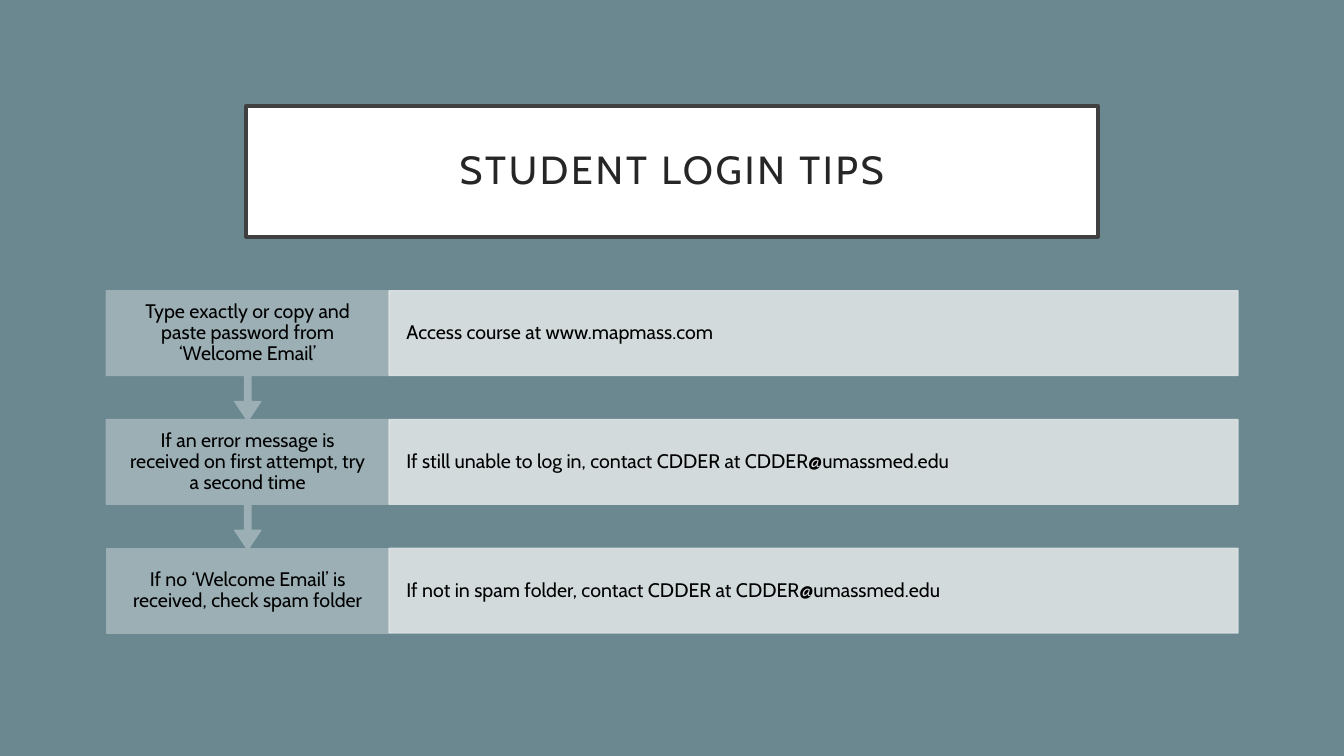
"""Build the student login tips slide with a three-step flow."""
from lxml import etree
from pptx import Presentation
from pptx import util as u
from pptx.dml import color as dml
from pptx.enum import shapes, text
from pptx.oxml import ns

hex_color = dml.RGBColor.from_string


def paint(shape, fill, line, width, opacity=100):
    shape.shadow.inherit = False
    shape.fill.solid()
    shape.fill.fore_color.rgb = hex_color(fill)
    shape.line.color.rgb = hex_color(line)
    shape.line.width = u.Pt(width)
    if opacity < 100:
        for color in shape._element.spPr.iter(ns.qn("a:srgbClr")):
            etree.SubElement(color, ns.qn("a:alpha"), val=str(opacity * 1000))


def write(shape, words, size=14, color="000000", align=text.PP_ALIGN.CENTER,
          side=14.4, edge=7.92, tracking=0):
    frame = shape.text_frame
    frame.word_wrap = True
    frame.auto_size = text.MSO_AUTO_SIZE.NONE
    frame.vertical_anchor = text.MSO_ANCHOR.MIDDLE
    frame.margin_left = frame.margin_right = u.Pt(side)
    frame.margin_top = frame.margin_bottom = u.Pt(edge)
    paragraph = frame.paragraphs[0]
    paragraph.alignment = align
    paragraph.line_spacing = 0.9
    run = paragraph.add_run()
    run.text = words
    run.font.name = "Cabin"
    run.font.size = u.Pt(size)
    run.font.color.rgb = hex_color(color)
    if tracking:
        run._r.get_or_add_rPr().set("spc", str(tracking * 100))


presentation = Presentation()
presentation.slide_width = u.Pt(960)
presentation.slide_height = u.Pt(540)
slide = presentation.slides.add_slide(presentation.slide_layouts[5])
slide.background.fill.solid()
slide.background.fill.fore_color.rgb = hex_color("6B8891")

title = slide.shapes.title
title.left, title.top = u.Pt(175.8), u.Pt(75.6)
title.width, title.height = u.Pt(608.4), u.Pt(93.6)
paint(title, "FFFFFF", "404040", 2.5)
write(title, "STUDENT LOGIN TIPS", size=28, color="262626", edge=14.4, tracking=2)

tips = [
    ("Type exactly or copy and paste password from ‘Welcome Email’",
     "Access course at www.mapmass.com"),
    ("If an error message is received on first attempt, try a second time",
     "If still unable to log in, contact CDDER at CDDER@umassmed.edu"),
    ("If no ‘Welcome Email’ is received, check spam folder",
     "If not in spam folder, contact CDDER at CDDER@umassmed.edu"),
]
first_top, row_pitch, row_height, callout_height = 207.7, 92, 60.5, 93
step_left, step_width = 75.9, 202.1
detail_left, detail_width = step_left + step_width, 606.3
last_row = len(tips) - 1

for row in reversed(range(len(tips))):
    step_words, detail_words = tips[row]
    top = u.Pt(first_top + row * row_pitch)
    step_box = u.Pt(step_left), top, u.Pt(step_width), u.Pt(row_height)

    if row == last_row:
        step = label = slide.shapes.add_shape(shapes.MSO_SHAPE.RECTANGLE, *step_box)
    else:
        step = slide.shapes.add_shape(
            shapes.MSO_SHAPE.UP_ARROW_CALLOUT, *step_box[:3], u.Pt(callout_height))
        step.rotation = 180
        for index, value in enumerate((0.05, 0.1, 0.15, 0.65)):
            step.adjustments[index] = value
        label = slide.shapes.add_textbox(*step_box)
    paint(step, "9BAFB5", "9BAFB5", 1)
    write(label, step_words)

    detail = slide.shapes.add_shape(
        shapes.MSO_SHAPE.RECTANGLE,
        u.Pt(detail_left), top, u.Pt(detail_width), u.Pt(row_height))
    paint(detail, "DEE3E5", "DEE3E5", 1, opacity=90)
    write(detail, detail_words, align=text.PP_ALIGN.LEFT, side=12.3, edge=13.7)

presentation.save("out.pptx")
